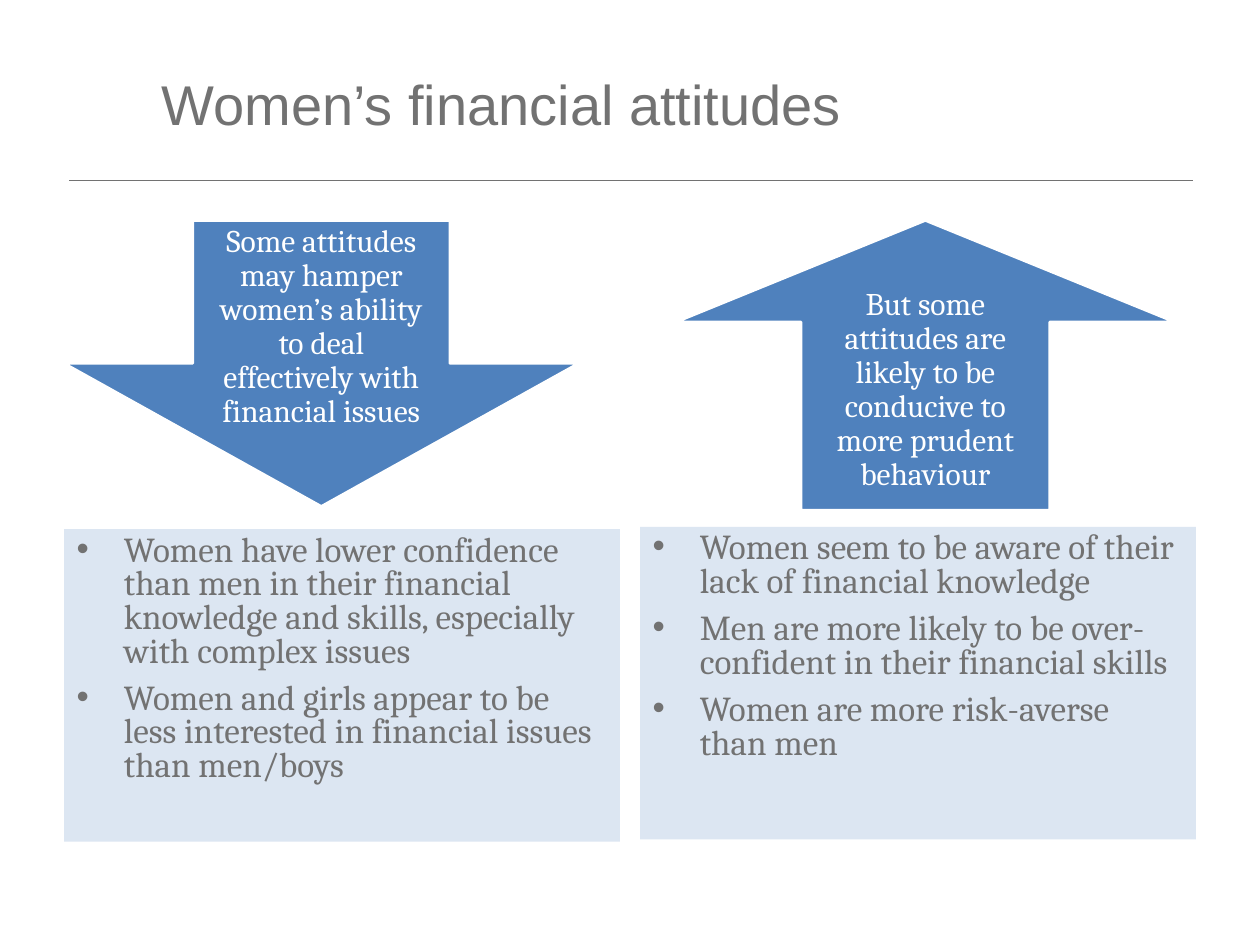
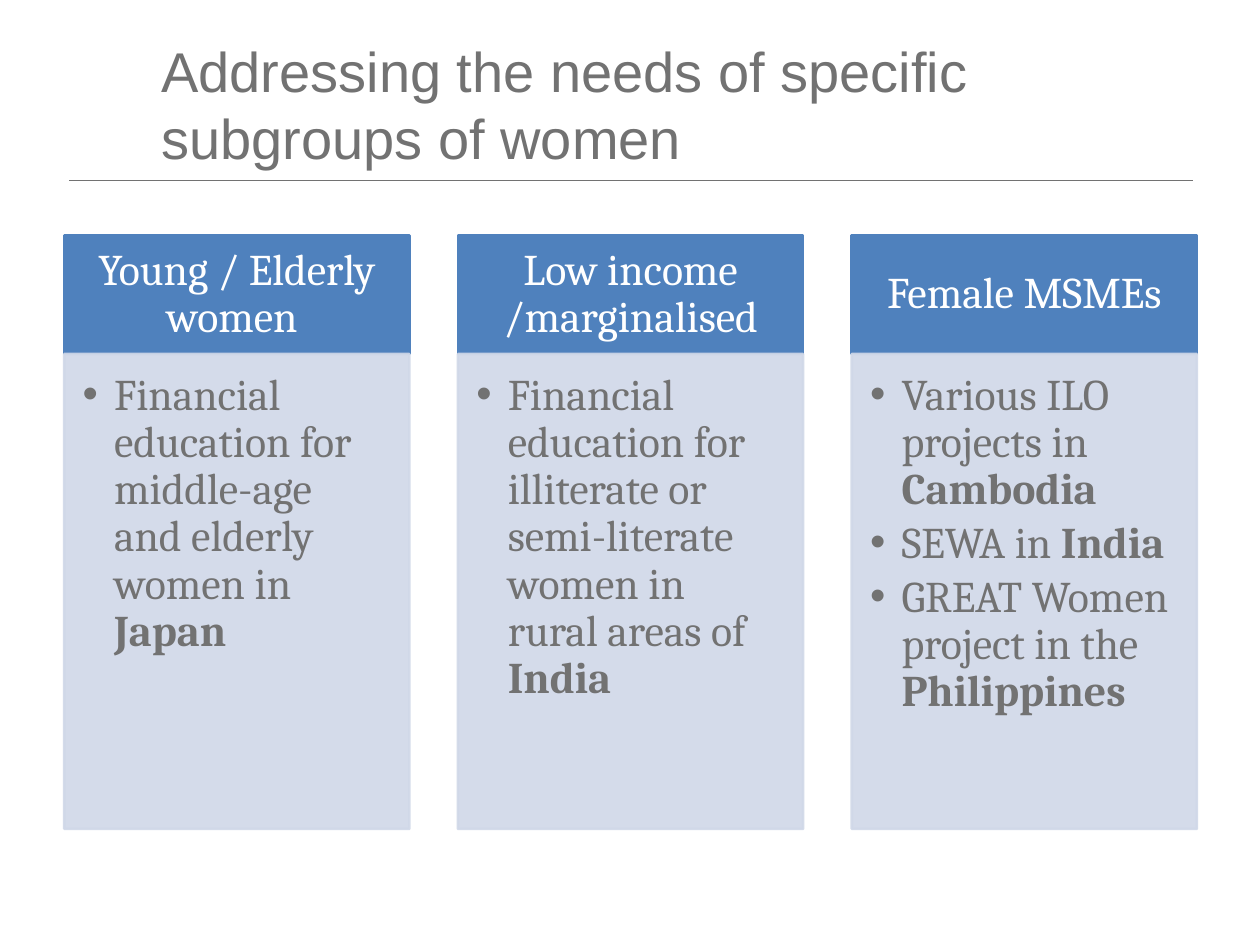
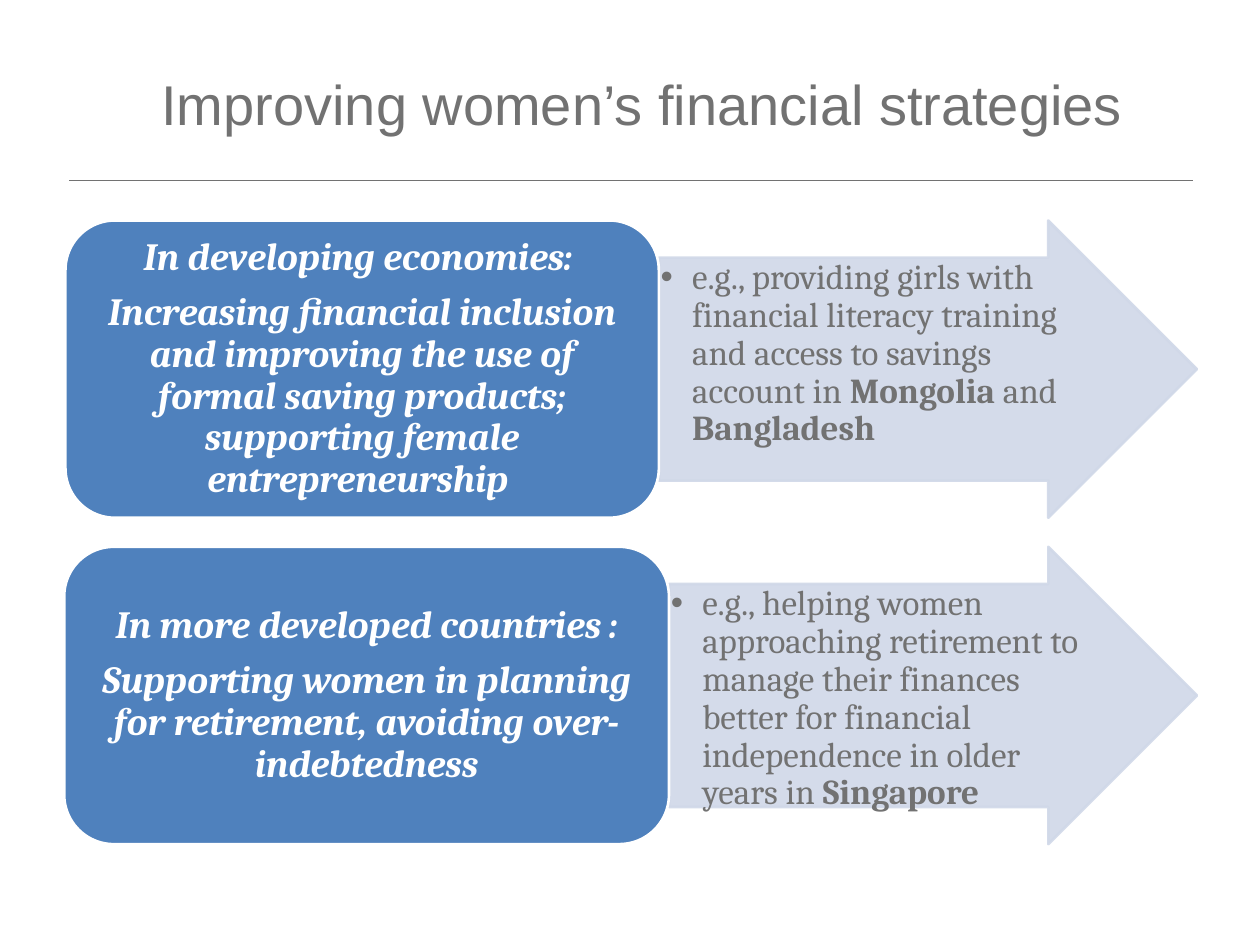
"""Build three slides on women's financial attitudes, subgroups and strategies."""
from dataclasses import dataclass

from lxml import etree
from pptx import Presentation
from pptx import util as u
from pptx.dml.color import RGBColor
from pptx.enum import shapes, text
from pptx.oxml.ns import qn

Pt = u.Pt
KIND = shapes.MSO_SHAPE


@dataclass(frozen=True)
class Theme:
    grey: str = "727272"
    white: str = "FFFFFF"
    blue: str = "4F81BD"
    pale: str = "DCE6F2"
    mist: str = "D0D8E8"
    mist_opacity: int = 90
    heading_font: str = "Arial"
    body_font: str = "Cambria"
    title_size: int = 32
    column_size: int = 25
    strategy_size: int = 22
    body_size: int = 20
    arrow_size: int = 18
    outline: float = 1.5
    rule: float = 0.5


THEME = Theme()
MIDDLE = text.MSO_ANCHOR.MIDDLE
CENTER = text.PP_ALIGN.CENTER
TITLE_BOX = (85, 18.7, 584, 80.6)
RULE = (39.6, 103, 681.8)

ATTITUDES_TITLE = "Women’s financial attitudes"
ATTITUDES = [
    {"arrow": KIND.DOWN_ARROW, "arrow_box": (36.7, 126, 293.8, 163.4), "head": 0.5,
     "claim": "Some attitudes may hamper women’s ability to deal effectively with financial issues",
     "panel_box": (36.7, 302.4, 317.5, 178.6),
     "points": ["Women have lower confidence than men in their financial knowledge and skills, "
                "especially with complex issues",
                "Women and girls appear to be less interested in financial issues than men/boys"]},
    {"arrow": KIND.UP_ARROW, "arrow_box": (386.6, 126, 284.4, 165.6), "head": 0.35,
     "claim": "But some attitudes are likely to be conducive to more prudent behaviour",
     "panel_box": (365.8, 301, 317.5, 178.6),
     "points": ["Women seem to be aware of their lack of financial knowledge",
                "Men are more likely to be over-confident in their financial skills",
                "Women are more risk-averse than men"]},
]

SUBGROUPS_TITLE = "Addressing the needs of specific subgroups of women"
SUBGROUPS = [
    ("Young / Elderly women ",
     ["Financial education for middle-age and elderly women in |Japan|"]),
    ("Low income /marginalised",
     ["Financial education for illiterate or semi-literate women in rural areas of |India|"]),
    ("Female MSMEs",
     ["Various ILO projects in |Cambodia|", "SEWA in |India|",
      "GREAT Women project in the |Philippines|"]),
]
COLUMN = {"left": 36.7, "step": 225, "width": 197.3, "top": 134.6, "header": 67.7, "body": 271.4}

STRATEGIES_TITLE = "Improving women’s financial strategies"
STRATEGIES = [
    (37.4, 339.1, ["In developing economies: ",
                   "Increasing financial inclusion and improving the use of formal saving products; "
                   "supporting female entrepreneurship "],
     "e.g., providing girls with financial literacy training and access to savings account in "
     "|Mongolia |and |Bangladesh|"),
    (36.7, 345.6, ["In more developed countries :",
                   "Supporting women in planning for retirement, avoiding over-indebtedness"],
     "e.g., helping women approaching retirement to manage their finances better for financial "
     "independence in older years in |Singapore|"),
]
ROW = {"top": 126, "step": 186.5, "height": 169.9, "right": 684}

CLAIM = {"size": THEME.arrow_size, "color": THEME.white, "anchor": MIDDLE, "inset": (10, 10, 10, 10),
         "paragraph": {"alignment": CENTER, "line_spacing": 0.9}}
PANEL = {"size": THEME.body_size, "color": THEME.grey, "inset": (7.2, 3.6, 7.2, 3.6), "indent": 27,
         "before": 7.7, "paragraph": {"line_spacing": 0.8}}
HEADER = {**CLAIM, "size": THEME.column_size, "inset": (14, 8, 14, 8)}
COLUMN_BODY = {"size": THEME.column_size, "color": THEME.grey, "inset": (10.5, 10.5, 14, 15.8),
               "indent": 18, "paragraph": {"line_spacing": 0.9, "space_after": Pt(3.75)}}
STRATEGY = {"size": THEME.strategy_size, "color": THEME.white, "anchor": MIDDLE,
            "inset": (6.6, 3.3, 6.6, 3.3), "font": {"bold": True, "italic": True},
            "paragraph": {"alignment": CENTER, "line_spacing": 0.9, "space_after": Pt(7.7)}}
EXAMPLE = {**COLUMN_BODY, "size": THEME.body_size, "inset": (1, 1, 1, 1),
           "paragraph": {"line_spacing": 0.9, "space_after": Pt(3)}}


def set_all(target, values):
    for name, value in values.items():
        setattr(target, name, value)


def add_bullet(paragraph, indent):
    properties = paragraph._p.get_or_add_pPr()
    properties.set("marL", str(Pt(indent)))
    properties.set("indent", str(-Pt(indent)))
    etree.SubElement(properties, qn("a:buFont"), typeface="Arial")
    etree.SubElement(properties, qn("a:buChar"), char="•")


def write(shape, lines, style):
    """Fill a shape with paragraphs; words between bars are bold."""
    frame = shape.text_frame
    sides = ("margin_left", "margin_top", "margin_right", "margin_bottom")
    set_all(frame, dict(zip(sides, map(Pt, style["inset"]))))
    set_all(frame, {"word_wrap": True, "auto_size": text.MSO_AUTO_SIZE.NONE,
                    "vertical_anchor": style.get("anchor", text.MSO_ANCHOR.TOP)})
    for index, line in enumerate(lines):
        paragraph = frame.add_paragraph() if index else frame.paragraphs[0]
        if "indent" in style:
            add_bullet(paragraph, style["indent"])
        set_all(paragraph, {"alignment": text.PP_ALIGN.LEFT, **style["paragraph"]})
        paragraph.space_before = Pt(style.get("before", 0) if index else 0)
        set_all(paragraph.font, {"size": Pt(style["size"]), "name": THEME.body_font})
        for part, words in enumerate(line.split("|")):
            if words:
                run = paragraph.add_run()
                run.text = words
                set_all(run.font, {"size": Pt(style["size"]), "name": THEME.body_font,
                                   **style.get("font", {})})
                run.font.color.rgb = RGBColor.from_string(style["color"])
                if part % 2:
                    run.font.bold = True


def add_block(slide, kind, box, fill, line=None, adjustments=(), opacity=None):
    shape = slide.shapes.add_shape(kind, *map(Pt, box))
    shape.shadow.inherit = False
    for index, value in enumerate(adjustments):
        shape.adjustments[index] = value
    shape.fill.solid()
    shape.fill.fore_color.rgb = RGBColor.from_string(fill)
    if line:
        shape.line.color.rgb = RGBColor.from_string(line)
        shape.line.width = Pt(THEME.outline)
    else:
        shape.line.fill.background()
    if opacity:
        for color in shape._element.spPr.iter(qn("a:srgbClr")):
            etree.SubElement(color, qn("a:alpha"), val=str(opacity * 1000))
    return shape


def add_titled_slide(presentation, words):
    slide = presentation.slides.add_slide(presentation.slide_layouts[5])
    title = slide.shapes.title
    set_all(title, dict(zip(("left", "top", "width", "height"), map(Pt, TITLE_BOX))))
    title.text_frame.text = words
    set_all(title.text_frame, {"vertical_anchor": MIDDLE, "word_wrap": True,
                               "auto_size": text.MSO_AUTO_SIZE.NONE})
    paragraph = title.text_frame.paragraphs[0]
    paragraph.alignment = text.PP_ALIGN.LEFT
    set_all(paragraph.font, {"name": THEME.heading_font, "size": Pt(THEME.title_size)})
    paragraph.font.color.rgb = RGBColor.from_string(THEME.grey)
    left, top, right = map(Pt, RULE)
    rule = slide.shapes.add_connector(shapes.MSO_CONNECTOR.STRAIGHT, left, top, right, top)
    rule.line.color.rgb = RGBColor.from_string(THEME.grey)
    rule.line.width = Pt(THEME.rule)
    etree.SubElement(rule._element.spPr, qn("a:effectLst"))
    return slide


def build_attitudes(presentation):
    slide = add_titled_slide(presentation, ATTITUDES_TITLE)
    for side in ATTITUDES:
        arrow = add_block(slide, side["arrow"], side["arrow_box"], THEME.blue, THEME.white,
                          (0.5, side["head"]))
        write(arrow, [side["claim"]], CLAIM)
        panel = add_block(slide, KIND.RECTANGLE, side["panel_box"], THEME.pale)
        write(panel, side["points"], PANEL)


def build_subgroups(presentation):
    slide = add_titled_slide(presentation, SUBGROUPS_TITLE)
    top, width = COLUMN["top"], COLUMN["width"]
    for index, (name, projects) in enumerate(SUBGROUPS):
        left = COLUMN["left"] + index * COLUMN["step"]
        header = add_block(slide, KIND.RECTANGLE, (left, top, width, COLUMN["header"]),
                           THEME.blue, THEME.blue)
        write(header, [name], HEADER)
        body = add_block(slide, KIND.RECTANGLE,
                         (left, top + COLUMN["header"], width, COLUMN["body"]),
                         THEME.mist, THEME.mist, opacity=THEME.mist_opacity)
        write(body, projects, COLUMN_BODY)


def build_strategies(presentation):
    slide = add_titled_slide(presentation, STRATEGIES_TITLE)
    for index, (left, width, strategy, example) in enumerate(STRATEGIES):
        top, edge = ROW["top"] + index * ROW["step"], left + width
        arrow = add_block(slide, KIND.RIGHT_ARROW, (edge, top, ROW["right"] - edge, ROW["height"]),
                          THEME.mist, THEME.mist, (0.75, 0.5), THEME.mist_opacity)
        write(arrow, [example], EXAMPLE)
        box = add_block(slide, KIND.ROUNDED_RECTANGLE, (left, top, width, ROW["height"]),
                        THEME.blue, THEME.white)
        write(box, strategy, STRATEGY)


def main():
    presentation = Presentation()
    set_all(presentation, {"slide_width": Pt(720), "slide_height": Pt(540)})
    for build in (build_attitudes, build_subgroups, build_strategies):
        build(presentation)
    presentation.save("out.pptx")


if __name__ == "__main__":
    main()
